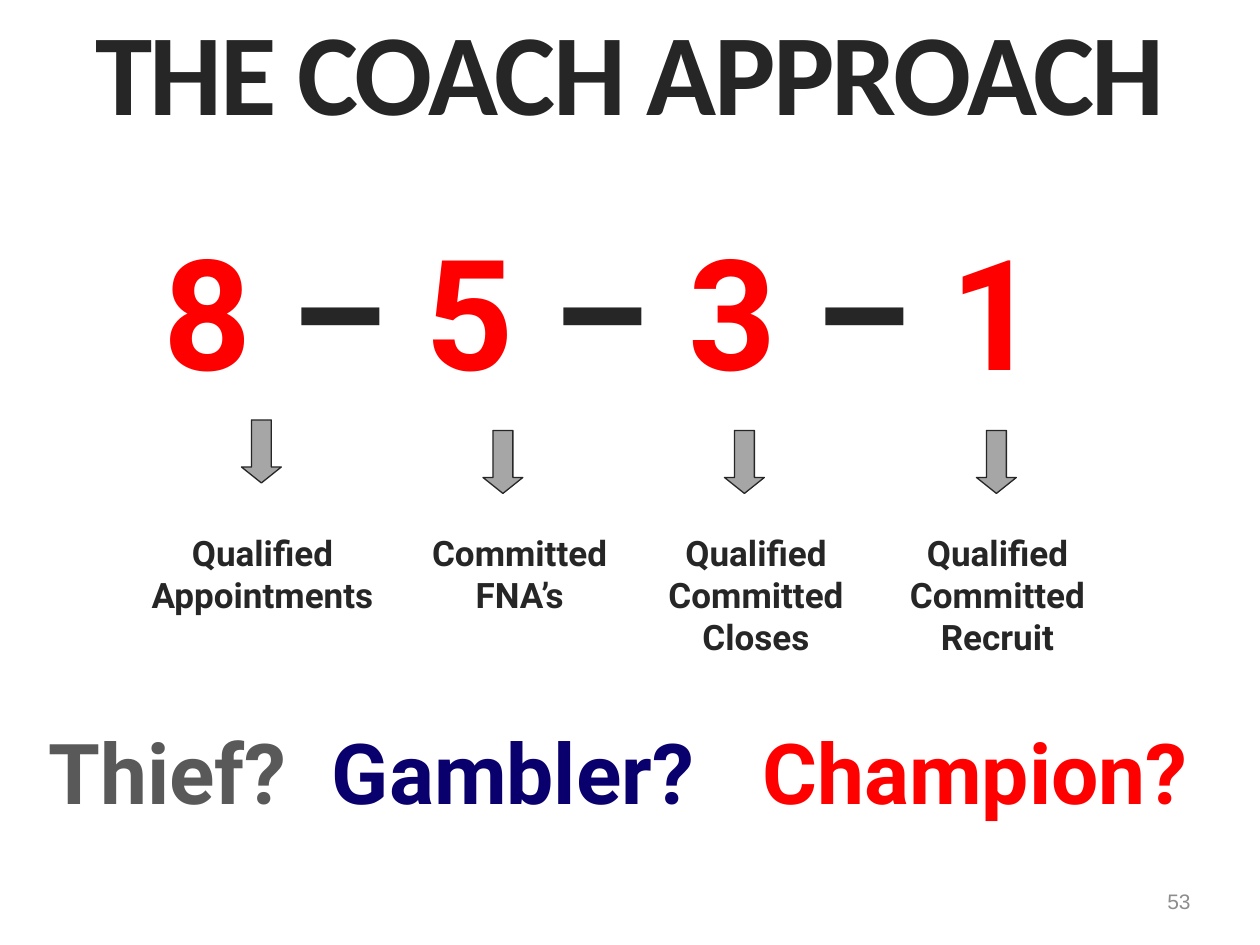
import pptx
import pptx.dml.color
import pptx.enum.shapes
import pptx.enum.text
import pptx.util
from dataclasses import dataclass

ALIGN = pptx.enum.text.PP_ALIGN
ANCHOR = pptx.enum.text.MSO_ANCHOR
CELL = pptx.util.Inches(1 / 12)  # the slide is a grid of 120 columns by 90 rows


@dataclass(frozen=True)
class Theme:
    dark: str = "262626"
    red: str = "FF0000"
    navy: str = "09006D"
    gray: str = "595959"
    pale: str = "8D8D8D"
    arrow: str = "A6A6A6"
    heading: str = "Calibri"
    body: str = "Roboto"
    small: str = "Arial"
    title_size: int = 66
    ratio_size: int = 88
    question_size: int = 48
    label_size: int = 20
    number_size: int = 12


THEME = Theme()


def set_all(target, values):
    for name, value in values.items():
        setattr(target, name, value)


def grid(*cells):
    return [round(cell * CELL) for cell in cells]


def write(shape, runs, size, font=THEME.body, bold=True, align=ALIGN.LEFT,
          anchor=ANCHOR.TOP, inset=0.05, wrap=True):
    """Fill a shape with one paragraph made of (text, colour) runs."""
    frame = shape.text_frame
    margin = pptx.util.Inches(inset)
    set_all(frame, dict(word_wrap=wrap, vertical_anchor=anchor,
                        auto_size=pptx.enum.text.MSO_AUTO_SIZE.NONE,
                        margin_left=margin, margin_right=margin,
                        margin_top=margin, margin_bottom=margin))
    paragraph = frame.paragraphs[0]
    paragraph.alignment = align
    for text, color in runs:
        run = paragraph.add_run()
        run.text = text
        set_all(run.font, dict(name=font, size=pptx.util.Pt(size), bold=bold))
        run.font.color.rgb = pptx.dml.color.RGBColor.from_string(color)


def add_text(slide, box, runs, size, **options):
    write(slide.shapes.add_textbox(*grid(*box)), runs, size, **options)


def add_title(slide, box, text):
    title = slide.shapes.title
    set_all(title, dict(zip(("left", "top", "width", "height"), grid(*box))))
    write(title, [(text, THEME.dark)], THEME.title_size, font=THEME.heading,
          align=ALIGN.CENTER, inset=0)
    title.text_frame.paragraphs[0].runs[0].font._element.set("spc", "-150")


def add_ratio(slide, box):
    runs = [("8 ", THEME.red), ("– ", THEME.dark), ("5 ", THEME.red),
            ("–", THEME.dark), (" 3 ", THEME.red), ("–", THEME.dark),
            (" 1", THEME.red)]
    add_text(slide, box, runs, THEME.ratio_size)


def add_arrow(slide, box):
    arrow = slide.shapes.add_shape(
        pptx.enum.shapes.MSO_SHAPE.DOWN_ARROW, *grid(*box))
    arrow.shadow.inherit = False
    arrow.adjustments[0] = 0.5
    arrow.adjustments[1] = 0.4
    arrow.fill.solid()
    arrow.fill.fore_color.rgb = pptx.dml.color.RGBColor.from_string(THEME.arrow)
    arrow.line.color.rgb = pptx.dml.color.RGBColor.from_string(THEME.dark)
    arrow.line.width = pptx.util.Pt(0.75)


def add_steps(slide, top):
    """Place an arrow above the label of each number."""
    steps = [  # label, label column, label width, arrow column, arrow row
        ("Qualified Appointments", 11, 28, 23, 0),
        ("Committed FNA’s", 38, 23, 46, 1),
        ("Qualified Committed Closes", 61, 22, 69, 1),
        ("Qualified Committed Recruit", 82, 26, 93, 1),
    ]
    for label, column, width, arrow_column, arrow_row in steps:
        add_arrow(slide, (arrow_column, top + arrow_row, 3.8, 6))
        rows = 13.2 if label.count(" ") == 2 else 9.2
        add_text(slide, (column, top + 10, width, rows), [(label, THEME.dark)],
                 THEME.label_size, align=ALIGN.CENTER)


def add_questions(slide, top):
    questions = [("Thief?", THEME.gray, 4, 29), ("Gambler?", THEME.navy, 31, 40),
                 ("Champion?", THEME.red, 72, 48)]
    for text, color, column, width in questions:
        add_text(slide, (column, top, width, 10.9), [(text, color)],
                 THEME.question_size)


def add_slide_number(slide, box, number):
    add_text(slide, box, [(number, THEME.pale)], THEME.number_size,
             font=THEME.small, bold=False, align=ALIGN.RIGHT,
             anchor=ANCHOR.MIDDLE, wrap=False)


def main():
    presentation = pptx.Presentation()
    set_all(presentation, dict(slide_width=120 * CELL, slide_height=90 * CELL))
    slide = presentation.slides.add_slide(presentation.slide_layouts[5])
    add_title(slide, (0, 0, 120, 12.8), "THE COACH APPROACH")
    add_ratio(slide, (15, 20, 91, 18.8))
    add_steps(slide, 40)
    add_questions(slide, 68)
    add_slide_number(slide, (110.4, 84.1, 3.6, 3.5), "53")
    presentation.save("out.pptx")


if __name__ == "__main__":
    main()
